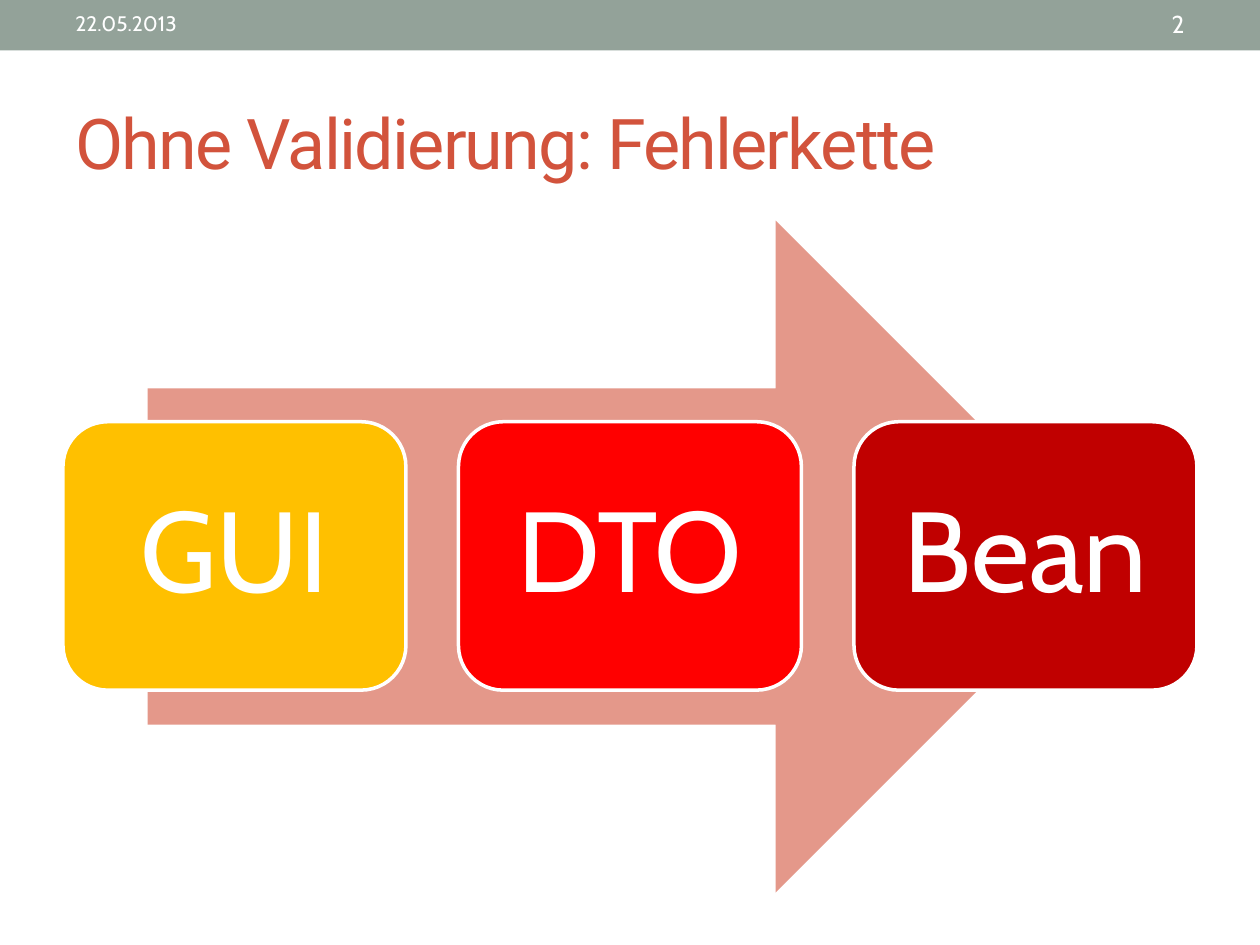
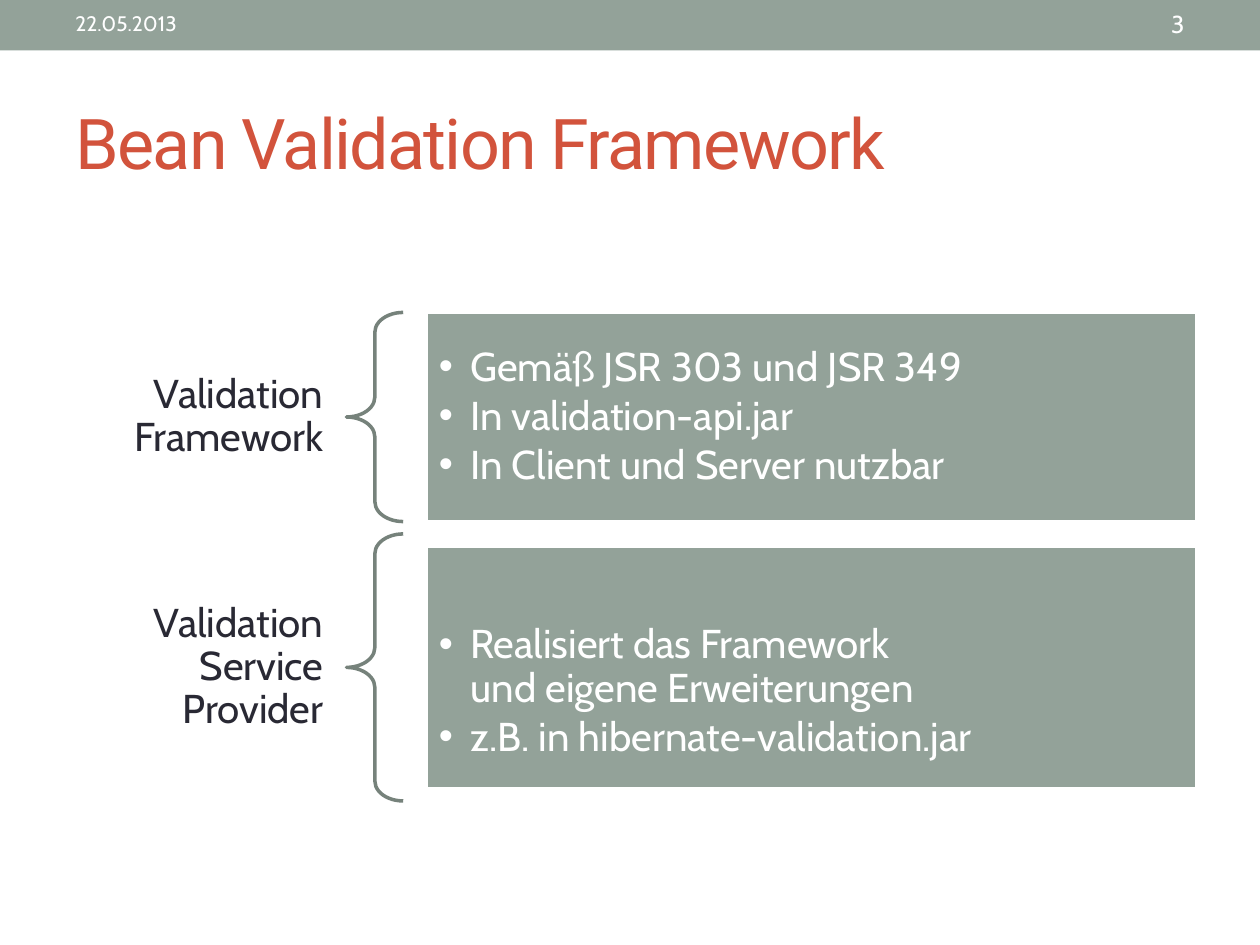
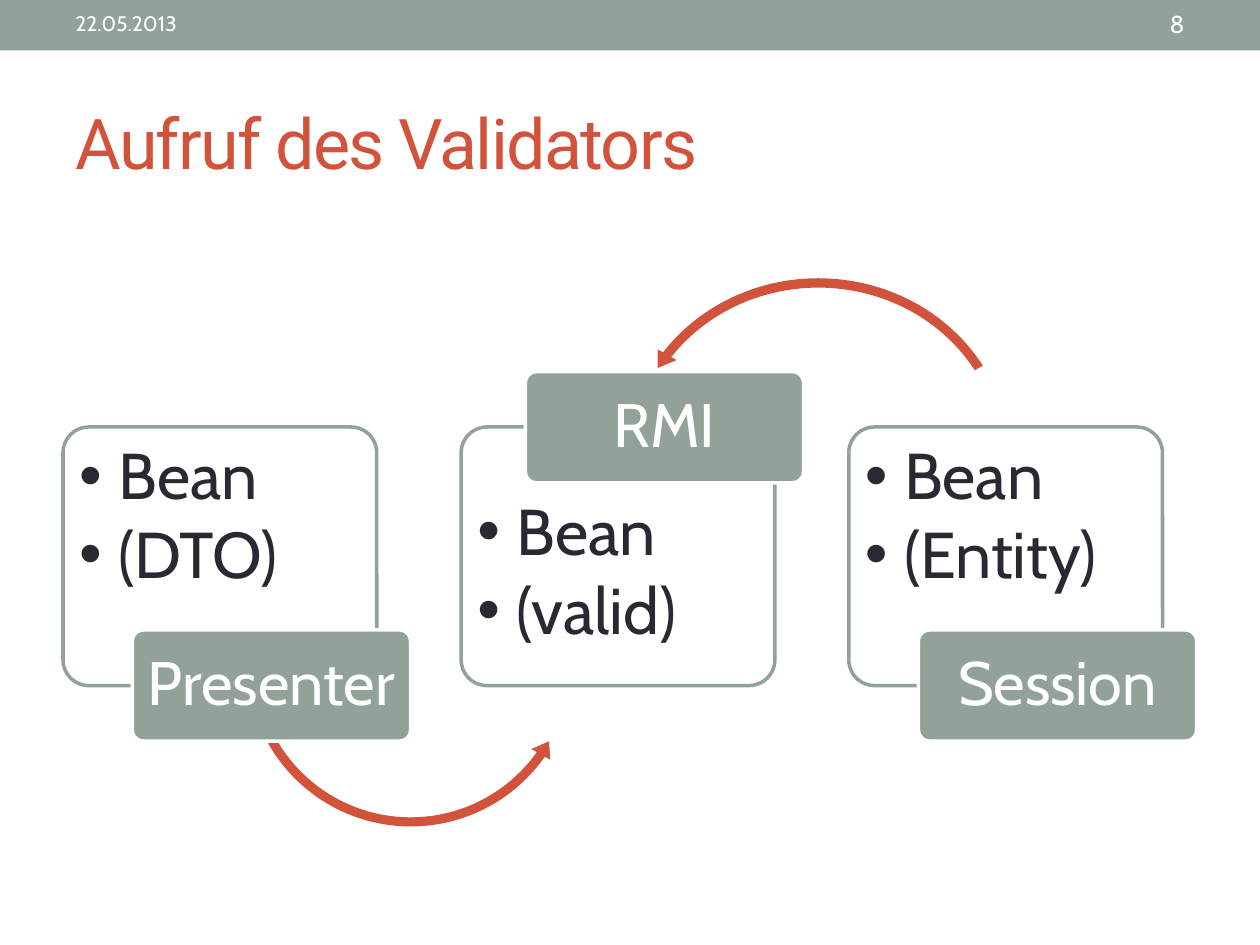
from copy import deepcopy
from dataclasses import dataclass

from lxml import etree
from pptx import Presentation
from pptx.dml.color import RGBColor
from pptx.enum import shapes, text
from pptx.oxml import ns
from pptx.util import Pt

KIND = shapes.MSO_SHAPE
ALIGN = text.PP_ALIGN
ANCHOR = text.MSO_ANCHOR


@dataclass(frozen=True)
class Theme:
    sage: str = "93A299"
    brick: str = "D2533C"
    salmon: str = "E4988A"
    amber: str = "FFC000"
    red: str = "FF0000"
    dark_red: str = "C00000"
    brace: str = "76827B"
    ink: str = "292934"
    white: str = "FFFFFF"
    title_font: str = "Roboto"
    body_font: str = "Cabin"
    title_size: int = 40
    stage_size: int = 65
    panel_size: int = 23
    card_size: int = 37
    tab_size: int = 35
    date_size: int = 12
    number_size: int = 14
    line_width: int = 2


class Deck:
    def __init__(self, theme):
        self.theme = theme
        self.prs = Presentation()
        self.prs.slide_width, self.prs.slide_height = Pt(720), Pt(540)
        self.s = None

    def slide(self, layout, title, number):
        t = self.theme
        first = self.s is None
        self.s = self.prs.slides.add_slide(self.prs.slide_layouts[layout])
        if first:
            band = self.shape(KIND.RECTANGLE, (0, 0, 720, 28.8), fill=t.sage)
            self.prs.slide_master.shapes.element.insert(2, band.element)
        sp = self.s.shapes.title
        self.place(sp, (36, 42, 648, 78))
        self.set_text(sp.text_frame, [title], t.title_size, t.brick,
                      font=t.title_font, spacing=1)
        for r in sp.text_frame.paragraphs[0].runs:
            r.font._element.set("spc", "-100")
        self.label("22.05.2013", (36, 1.4, 228, 26), t.date_size, t.white)
        self.label(number, (600, 1.4, 84, 26), t.number_size, t.white,
                   align=ALIGN.RIGHT)

    def place(self, sp, box):
        for name, value in zip(("left", "top", "width", "height"), box):
            setattr(sp, name, Pt(value))

    def paint(self, sp, fill=None, line=None):
        if fill:
            sp.fill.solid()
            sp.fill.fore_color.rgb = RGBColor.from_string(fill)
        else:
            sp.fill.background()
        if line:
            sp.line.color.rgb = RGBColor.from_string(line)
            sp.line.width = Pt(self.theme.line_width)
        else:
            sp.line.fill.background()

    def shape(self, kind, box, fill=None, line=None, adjust=(), flip=False):
        sp = self.s.shapes.add_shape(kind, *map(Pt, box))
        sp.shadow.inherit = False
        self.paint(sp, fill, line)
        for i, value in enumerate(adjust):
            sp.adjustments[i] = value
        if flip:
            sp.element.spPr.get_or_add_xfrm().set("flipH", "1")
        return sp

    def set_text(self, tf, lines, size, color, font=None, align=ALIGN.LEFT,
                 anchor=ANCHOR.MIDDLE, inset=(7.2, 3.6, 7.2, 3.6), spacing=0.9, after=0):
        frame = dict(word_wrap=True, auto_size=text.MSO_AUTO_SIZE.NONE,
                     vertical_anchor=anchor)
        sides = ("margin_left", "margin_top", "margin_right", "margin_bottom")
        frame.update(zip(sides, map(Pt, inset)))
        for name, value in frame.items():
            setattr(tf, name, value)
        paragraph = dict(alignment=align, line_spacing=spacing,
                         space_before=Pt(0), space_after=Pt(after))
        run = dict(name=font or self.theme.body_font, size=Pt(size), bold=False)
        for i, line in enumerate(lines):
            p = tf.add_paragraph() if i else tf.paragraphs[0]
            p.text = line
            for name, value in paragraph.items():
                setattr(p, name, value)
            for r in p.runs:
                for name, value in run.items():
                    setattr(r.font, name, value)
                r.font.color.rgb = RGBColor.from_string(color)
            for br in p._p.findall(ns.qn("a:br")):
                br.append(deepcopy(p.runs[0].font._element))

    def label(self, words, box, size, color, **fmt):
        sp = self.s.shapes.add_textbox(*map(Pt, box))
        self.set_text(sp.text_frame, [words], size, color, **fmt)

    def block(self, words, box, size, fill, inset, adjust=()):
        t = self.theme
        sp = self.shape(KIND.ROUNDED_RECTANGLE, box, fill, t.white, adjust)
        self.set_text(sp.text_frame, [words], size, t.white,
                      align=ALIGN.CENTER, inset=(inset,) * 4)

    def bullets(self, idx, lines, box, size, color, indent, **fmt):
        sp = self.s.placeholders[idx]
        self.s.shapes.element.append(sp.element)
        self.place(sp, box)
        self.set_text(sp.text_frame, lines, size, color, after=round(size * 0.14, 1), **fmt)
        for p in sp.text_frame.paragraphs:
            pPr = p._p.get_or_add_pPr()
            pPr.set("marL", str(Pt(indent)))
            pPr.set("indent", str(-Pt(indent)))
            etree.SubElement(pPr, ns.qn("a:buFont")).set("typeface", "Arial")
            etree.SubElement(pPr, ns.qn("a:buChar")).set("char", "•")
        return sp

    def drop_empty(self):
        for sp in list(self.s.placeholders):
            if not sp.text_frame.text:
                sp.element.getparent().remove(sp.element)


def error_chain(deck):
    t = deck.theme
    deck.slide(5, "Ohne Validierung: Fehlerkette", "2")
    deck.shape(KIND.RIGHT_ARROW, (84.4, 126, 550.8, 384), fill=t.salmon)
    stages = [("GUI", t.amber), ("DTO", t.red), ("Bean", t.dark_red)]
    width, gap = 196, 30
    for i, (name, color) in enumerate(stages):
        deck.block(name, (36 + i * (width + gap), 241, width, 153.4),
                   t.stage_size, color, inset=7)


def framework(deck):
    t = deck.theme
    deck.slide(3, "Bean Validation Framework", "3")
    rows = [
        ("Validation Framework", 238.3, 119.5, 119.5, 7.2,
         ["Gemäß JSR 303 und JSR 349", "In validation-api.jar",
          "In Client und Server nutzbar"]),
        ("Validation Service Provider", 381.4, 152.6, 139, 35.5,
         ["Realisiert das Framework\vund eigene Erweiterungen",
          "z.B. in hibernate-validation.jar"]),
    ]
    for idx, (name, middle, brace, panel, top_inset, lines) in enumerate(rows, 1):
        deck.label(name, (36, middle - 52, 162, 104), t.panel_size, t.ink,
                   align=ALIGN.RIGHT, inset=(13, 4, 13, 4))
        deck.shape(KIND.LEFT_BRACE, (198, middle - brace / 2, 32.4, brace),
                   line=t.brace, adjust=(0.35, 0.5))
        sp = deck.bullets(idx, lines, (243.6, middle - panel / 2, 440.2, panel),
                          t.panel_size, t.white, 18, inset=(7.2, top_inset, 7.2, 7.2))
        deck.paint(sp, t.sage, t.white)


def validator_call(deck):
    t = deck.theme
    deck.slide(4, "Aufruf des Validators", "8")
    deck.shape(KIND.LEFT_CIRCULAR_ARROW, (137.5, 281.5, 194.4, 194.4), fill=t.brick,
               adjust=(0.027, 3.351, 21.106, 90.245, 0.032))
    deck.shape(KIND.CIRCULAR_ARROW, (354.2, 155.5, 226.8, 213.8), fill=t.brick,
               adjust=(0.025, 3.031, 195.214, 125.755, 0.029), flip=True)
    low, high = (360, 247.7), (212.4, 279.4)
    cards = [(36, "(DTO)", "Presenter", low),
             (263.5, "(valid)", "RMI", high),
             (485, "(Entity)", "Session", low)]
    for i, (left, state, tab, (tab_top, list_top)) in enumerate(cards):
        deck.shape(KIND.ROUNDED_RECTANGLE, (left, 244, 179.3, 147.8),
                   t.white, t.sage, (0.1,))
        deck.bullets(i + 1, ["Bean", state], (left + 3.4, list_top, 172, 109.4),
                     t.card_size, t.ink, 22.5, anchor=ANCHOR.TOP, inset=(5.8,) * 4)
        deck.block(tab, (75.6 + i * 224.6, tab_top, 159, 63.5),
                   t.tab_size, t.sage, inset=4, adjust=(0.1,))
    deck.drop_empty()


def main():
    deck = Deck(Theme())
    error_chain(deck)
    framework(deck)
    validator_call(deck)
    deck.prs.save("out.pptx")


if __name__ == "__main__":
    main()
